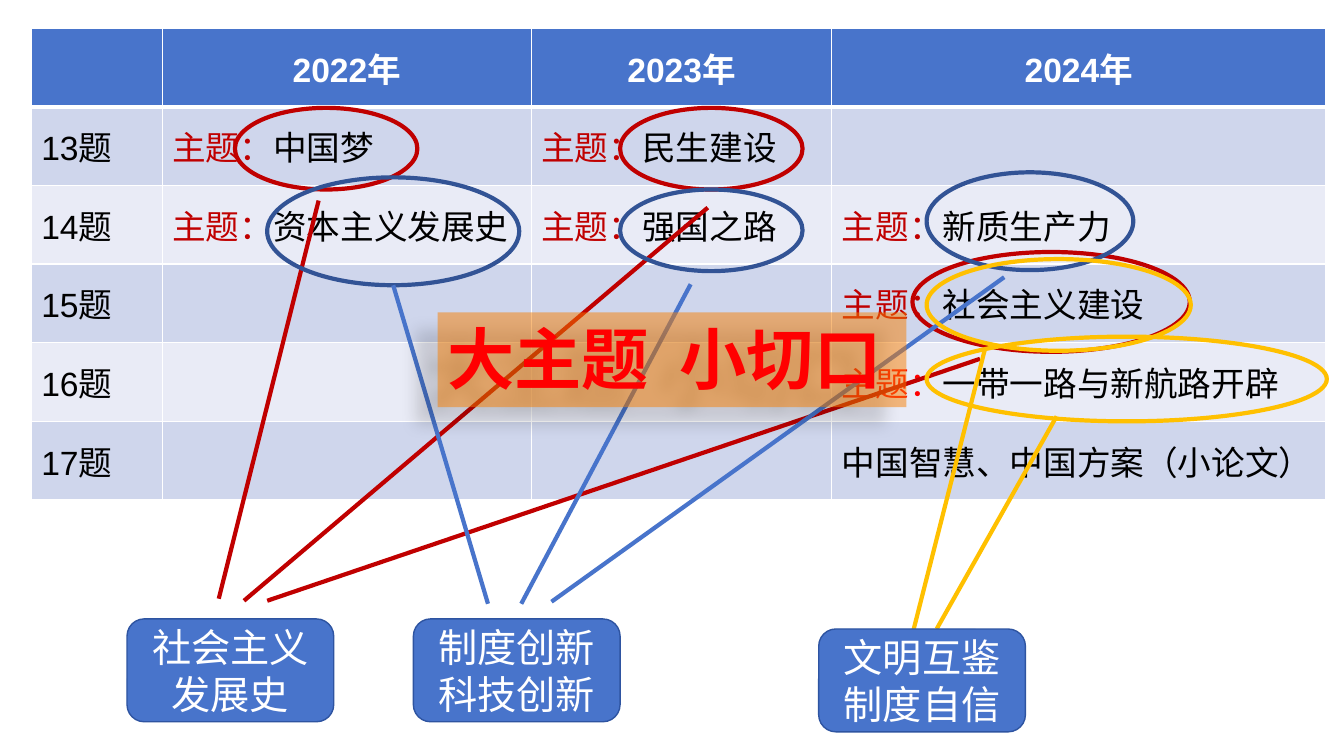
from dataclasses import dataclass

from lxml import etree
from pptx import Presentation
from pptx.dml.color import RGBColor
from pptx.enum import shapes, text
from pptx.oxml import ns
from pptx.util import Inches, Pt


@dataclass(frozen=True)
class Theme:
    font: str = "Arial"
    banner_font: str = "Noto Sans CJK SC"
    blue: str = "4874CB"
    blue_edge: str = "2E54A1"
    blue_ring: str = "325395"
    red: str = "C00000"
    bright_red: str = "FF0000"
    gold: str = "FFC000"
    orange: str = "F87F01"
    odd_band: str = "CFD6EC"
    even_band: str = "E9EBF6"
    white: str = "FFFFFF"
    black: str = "000000"
    table_size: int = 24
    box_size: int = 28
    banner_size: int = 48
    stroke: int = 3


THEME = Theme()
TOPIC = "主题："
YEARS = ["", "2022年", "2023年", "2024年"]
QUESTIONS = [
    ["13题", "主题：中国梦", "主题：民生建设", ""],
    ["14题", "主题：资本主义发展史", "主题：强国之路", "主题：新质生产力"],
    ["15题", "", "", "主题：社会主义建设"],
    ["16题", "", "", "主题：一带一路与新航路开辟"],
    ["17题", "", "", "中国智慧、中国方案（小论文）"],
]
COLUMN_WIDTHS = [1.3, 3.66, 2.98, 4.9]
ROW_HEIGHT = 0.78

# Each theme group: ring colour, line colour, rings, lines, box corner, box text
GROUPS = [
    (THEME.red, THEME.red,
     [(2.33, 1.07, 1.81, 0.81), (9.05, 2.5, 2.75, 0.99), (6.15, 1.07, 1.81, 0.81)],
     [(3.16, 1.99, 2.17, 5.94), (7.02, 2.06, 2.42, 5.96), (9.72, 3.56, 2.65, 5.96)],
     (1.26, 6.14), ["社会主义发展史"]),
    (THEME.blue_ring, THEME.blue,
     [(2.65, 1.76, 2.5, 1.07), (6.15, 1.88, 1.81, 0.81), (9.19, 1.71, 2.05, 0.97)],
     [(3.9, 2.83, 4.84, 5.99), (6.85, 2.82, 5.17, 5.99), (9.96, 2.75, 5.47, 5.97)],
     (4.1, 6.14), ["制度创新", "科技创新"]),
    (THEME.gold, THEME.gold,
     [(9.19, 2.57, 2.62, 0.91), (9.19, 3.34, 3.97, 0.84)],
     [(10.48, 4.13, 9.29, 6.24), (9.77, 3.46, 9.05, 6.29)],
     (8.12, 6.24), ["文明互鉴", "制度自信"]),
]


def rgb(color):
    return RGBColor.from_string(color)


def style_font(font, size, color, bold=False, name=THEME.font):
    font.name, font.size, font.bold = name, Pt(size), bold
    font.color.rgb = rgb(color)


def style_line(line, color, width=THEME.stroke):
    line.color.rgb = rgb(color)
    line.width = Pt(width)


def add_element(parent, tag, **attributes):
    return etree.SubElement(parent, ns.qn(tag), attributes)


def set_borders(cell, top, bottom):
    properties = cell._tc.get_or_add_tcPr()
    for side, width in zip("LRTB", (1, 1, top, bottom)):
        border = add_element(properties, f"a:ln{side}", w=str(Pt(width)))
        fill = add_element(border, "a:solidFill")
        add_element(fill, "a:srgbClr", val=THEME.white)


def fill_cell(cell, content, row):
    header = row == 0
    set_borders(cell, top=3 if row == 1 else 1, bottom=3 if header else 1)
    cell.fill.solid()
    band = THEME.odd_band if row % 2 else THEME.even_band
    cell.fill.fore_color.rgb = rgb(THEME.blue if header else band)
    cell.vertical_anchor = text.MSO_ANCHOR.MIDDLE
    paragraph = cell.text_frame.paragraphs[0]
    style_font(paragraph.font, THEME.table_size,
               THEME.white if header else THEME.black, header)
    if header:
        paragraph.alignment = text.PP_ALIGN.CENTER
    if content.startswith(TOPIC):
        label = paragraph.add_run()
        label.text = TOPIC
        label.font.color.rgb = rgb(THEME.bright_red if row == 4 else THEME.red)
        content = content.removeprefix(TOPIC)
    if content:
        paragraph.add_run().text = content


def add_question_table(slide):
    rows = [YEARS] + QUESTIONS
    table = slide.shapes.add_table(
        len(rows), len(YEARS), Inches(0.31), Inches(0.28),
        Inches(sum(COLUMN_WIDTHS)), Inches(ROW_HEIGHT * len(rows))).table
    for column, width in zip(table.columns, COLUMN_WIDTHS):
        column.width = Inches(width)
    for row, contents in enumerate(rows):
        table.rows[row].height = Inches(ROW_HEIGHT)
        for column, content in enumerate(contents):
            fill_cell(table.cell(row, column), content, row)


def add_preset(slide, kind, box):
    shape = slide.shapes.add_shape(kind, *map(Inches, box))
    shape.shadow.inherit = False
    return shape


def add_ring(slide, box, color):
    ring = add_preset(slide, shapes.MSO_SHAPE.OVAL, box)
    ring.fill.background()
    style_line(ring.line, color)


def add_link(slide, ends, color):
    link = slide.shapes.add_connector(shapes.MSO_CONNECTOR.STRAIGHT, *map(Inches, ends))
    style_line(link.line, color)
    add_element(link._element.spPr, "a:effectLst")


def add_theme_box(slide, corner, lines):
    box = add_preset(slide, shapes.MSO_SHAPE.ROUNDED_RECTANGLE, (*corner, 2.05, 1.02))
    box.fill.solid()
    box.fill.fore_color.rgb = rgb(THEME.blue)
    style_line(box.line, THEME.blue_edge, 1)
    frame = box.text_frame
    frame.word_wrap = True
    frame.vertical_anchor = text.MSO_ANCHOR.MIDDLE
    frame.text = "\n".join(lines)
    for paragraph in frame.paragraphs:
        paragraph.alignment = text.PP_ALIGN.CENTER
        style_font(paragraph.font, THEME.box_size, THEME.white)


def add_alpha(color_element, percent):
    add_element(color_element, "a:alpha", val=str(percent * 1000))


def add_banner(slide):
    """Add the translucent slogan with its soft shadow."""
    banner = add_preset(slide, shapes.MSO_SHAPE.RECTANGLE, (4.34, 3.1, 4.65, 0.94))
    banner.fill.solid()
    banner.fill.fore_color.rgb = rgb(THEME.orange)
    banner.line.fill.background()
    properties = banner._element.spPr
    add_alpha(properties.find(ns.qn("a:solidFill")).find(ns.qn("a:srgbClr")), 50)
    shadow = add_element(properties.find(ns.qn("a:effectLst")), "a:outerShdw",
                         blurRad=str(Pt(11.8)), dist=str(Pt(19.7)),
                         dir=str(141 * 60000), rotWithShape="0")
    add_alpha(add_element(shadow, "a:srgbClr", val=THEME.black), 28)

    frame = banner.text_frame
    frame.word_wrap = True
    frame.vertical_anchor = text.MSO_ANCHOR.TOP
    paragraph = frame.paragraphs[0]
    paragraph.alignment = text.PP_ALIGN.LEFT
    run = paragraph.add_run()
    run.text = "大主题  小切口"
    style_font(run.font, THEME.banner_size, THEME.bright_red, True, THEME.banner_font)
    add_element(run.font._element, "a:ea", typeface=THEME.banner_font)


def main():
    presentation = Presentation()
    presentation.slide_width, presentation.slide_height = Inches(13.33), Inches(7.5)
    slide = presentation.slides.add_slide(presentation.slide_layouts[6])
    add_question_table(slide)
    for ring_color, line_color, rings, links, corner, lines in GROUPS:
        for ring in rings:
            add_ring(slide, ring, ring_color)
        for link in links:
            add_link(slide, link, line_color)
        add_theme_box(slide, corner, lines)
    add_banner(slide)
    presentation.save("out.pptx")


if __name__ == "__main__":
    main()
